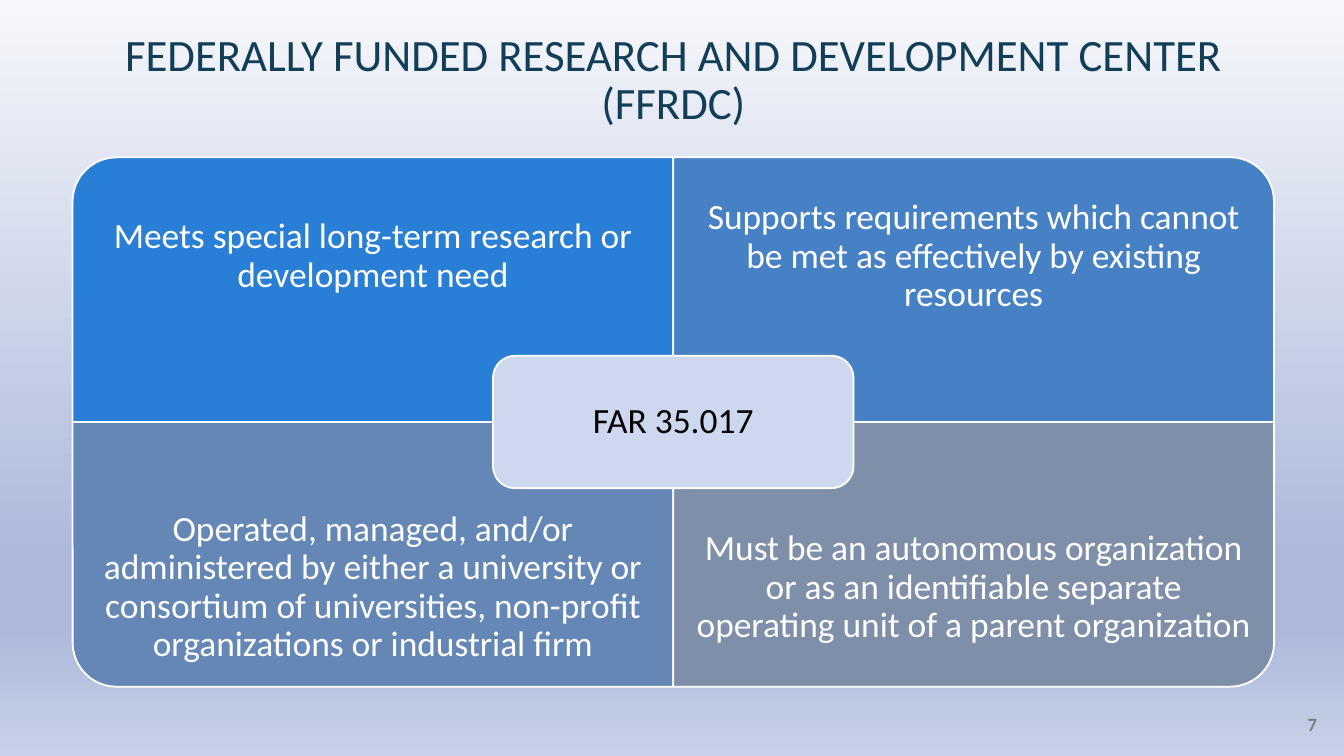
from dataclasses import dataclass

from lxml import etree
from pptx import Presentation
from pptx import util as u
from pptx.dml.color import RGBColor
from pptx.enum import shapes, text
from pptx.oxml.ns import qn


@dataclass(frozen=True)
class Theme:
    font: str = "Calibri"
    title_size: float = 24
    body_size: float = 19
    number_size: float = 10
    title: str = "123E57"
    light: str = "FFFFFF"
    dark: str = "000000"
    muted: str = "7F7F7F"
    hub: str = "CDD8EF"
    quadrants: tuple = ("297FD5", "4781C5", "6487B6", "7F8FA9")
    backdrop: tuple = ((0, "F6F7FB"), (74, "ACB9DB"), (83, "ACB9DB"), (100, "C8D1E7"))


class MatrixSlide:
    """A slide with a 2 by 2 grid; places are given in its columns and rows."""

    LEFT, TOP = u.Inches(0.54), u.Inches(1.17)
    COLUMN, ROW = u.Inches(4.47), u.Inches(1.97)

    def __init__(self, deck, theme):
        self.theme = theme
        self.slide = deck.slides.add_slide(deck.slide_layouts[5])

    def cells(self, column, row, columns, rows):
        """Turn grid units into left, top, width and height."""
        return (round(self.LEFT + column * self.COLUMN), round(self.TOP + row * self.ROW),
                round(columns * self.COLUMN), round(rows * self.ROW))

    def backdrop(self):
        fill = self.slide.background.fill
        fill.gradient()
        fill.gradient_angle = 270
        stops = next(self.slide.element.iter(qn("a:gsLst")))
        for stop in list(stops):
            stops.remove(stop)
        for percent, color in self.theme.backdrop:
            stop = etree.SubElement(stops, qn("a:gs"), pos=str(percent * 1000))
            etree.SubElement(stop, qn("a:srgbClr"), val=color)

    def set_words(self, holder, words, size, color, inset=0.0, bold=False,
                  align=text.PP_ALIGN.CENTER, anchor=text.MSO_ANCHOR.MIDDLE):
        frame = holder.text_frame
        frame.text = words
        frame.word_wrap = True
        frame.auto_size = text.MSO_AUTO_SIZE.NONE
        frame.vertical_anchor = anchor
        frame.margin_left = frame.margin_right = u.Inches(inset)
        frame.margin_top = frame.margin_bottom = u.Inches(inset)
        paragraph = frame.paragraphs[0]
        paragraph.alignment = align
        paragraph.line_spacing = 0.9
        for run in paragraph.runs:
            run.font.name = self.theme.font
            run.font.size = u.Pt(size)
            run.font.bold = bold
            run.font.color.rgb = RGBColor.from_string(color)

    def title(self, words):
        heading = self.slide.shapes.title
        heading.left, heading.top, heading.width, heading.height = (
            self.LEFT, u.Inches(0.34), 2 * self.COLUMN, u.Inches(0.62))
        self.set_words(heading, words, self.theme.title_size, self.theme.title,
                       anchor=text.MSO_ANCHOR.BOTTOM)

    def panel(self, preset, place, color):
        panel = self.slide.shapes.add_shape(preset, *place)
        panel.shadow.inherit = False
        panel.fill.solid()
        panel.fill.fore_color.rgb = RGBColor.from_string(color)
        panel.line.color.rgb = RGBColor.from_string(self.theme.light)
        panel.line.width = u.Pt(1)
        return panel

    def quadrant(self, column, row, words, color, rotation):
        """Draw one cell, rotated so that its round corner points outwards."""
        left, top, width, height = self.cells(column, row, 1, 1)
        if rotation % 180:
            left, top = left + (width - height) // 2, top + (height - width) // 2
            width, height = height, width
        panel = self.panel(shapes.MSO_SHAPE.ROUND_1_RECTANGLE,
                           (left, top, width, height), color)
        panel.rotation = rotation
        label = self.slide.shapes.add_textbox(*self.cells(column, row * 1.25, 1, 0.75))
        self.set_words(label, words, self.theme.body_size, self.theme.light, inset=0.15)

    def hub(self, words):
        panel = self.panel(shapes.MSO_SHAPE.ROUNDED_RECTANGLE,
                           self.cells(0.7, 0.75, 0.6, 0.5), self.theme.hub)
        self.set_words(panel, words, self.theme.body_size, self.theme.dark, inset=0.08)

    def page_number(self, number):
        box = self.slide.shapes.add_textbox(
            u.Inches(9.46), u.Inches(5.32), u.Inches(0.34), u.Inches(0.2))
        self.set_words(box, number, self.theme.number_size, self.theme.muted, bold=True,
                       align=text.PP_ALIGN.RIGHT, anchor=text.MSO_ANCHOR.TOP)


CRITERIA = (
    "Meets special long-term research or development need",
    "Supports requirements which cannot be met as effectively by existing resources",
    "Operated, managed, and/or administered by either a university or consortium of "
    "universities, non-profit organizations or industrial firm",
    "Must be an autonomous organization or as an identifiable separate operating unit "
    "of a parent organization",
)
ROTATIONS = (270, 0, 180, 90)


def main():
    deck = Presentation()
    deck.slide_width = u.Inches(10)
    deck.slide_height = deck.slide_width * 9 // 16
    theme = Theme()
    page = MatrixSlide(deck, theme)
    page.backdrop()
    page.title("FEDERALLY FUNDED RESEARCH AND DEVELOPMENT CENTER (FFRDC)")
    for index, (criterion, color, rotation) in enumerate(
            zip(CRITERIA, theme.quadrants, ROTATIONS)):
        row, column = divmod(index, 2)
        page.quadrant(column, row, criterion, color, rotation)
    page.hub("FAR 35.017")
    page.page_number("7")
    deck.save("out.pptx")


if __name__ == "__main__":
    main()
